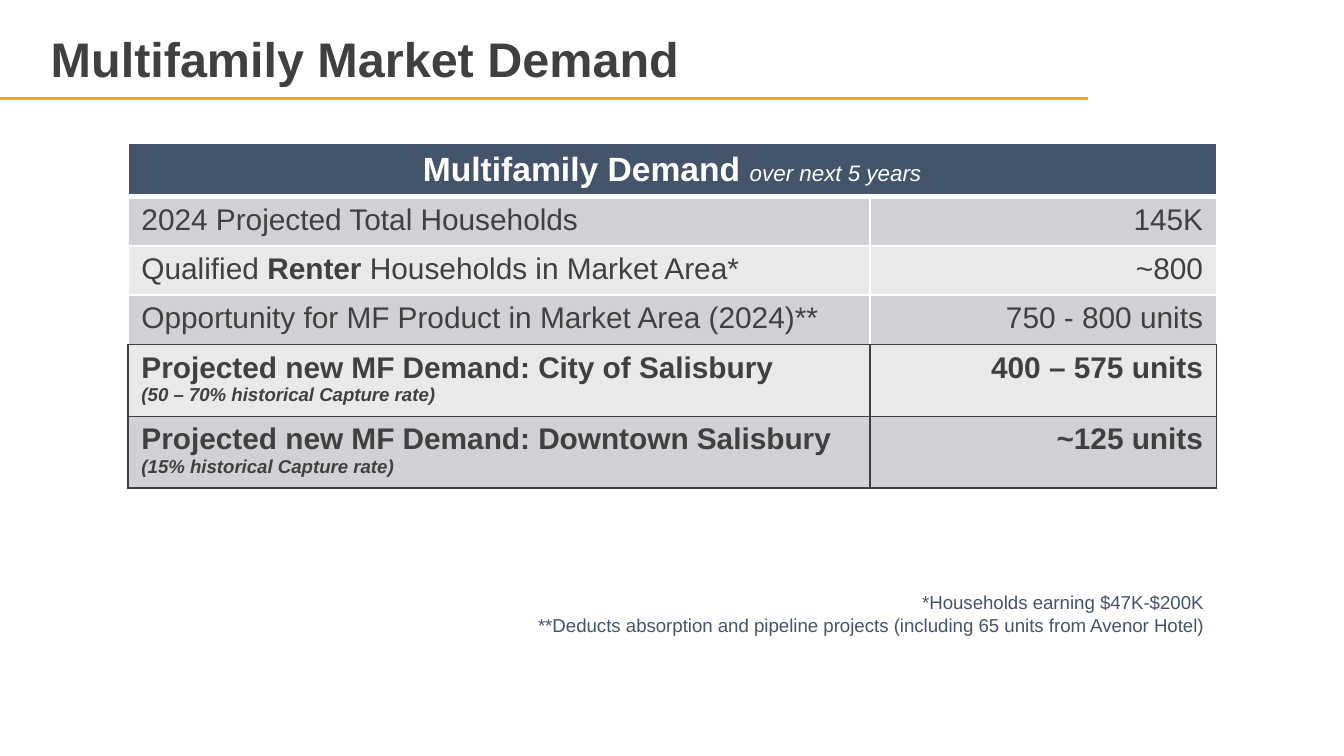
from dataclasses import dataclass
from lxml.etree import SubElement as Sub
from pptx import Presentation
from pptx.dml.color import RGBColor as RGB
from pptx.enum.shapes import MSO_CONNECTOR as Conn
from pptx.enum.text import MSO_ANCHOR as Anchor, PP_ALIGN as Align
from pptx.oxml import parse_xml
from pptx.oxml.ns import qn, nsdecls
from pptx.util import Cm, Pt


@dataclass
class Theme:
    font: str = "Arial"
    ink: str = "404040"
    navy: str = "44546A"
    gold: str = "FCA129"
    white: str = "FFFFFF"
    dark: str = "CFD1D4"
    light: str = "E9E9EB"
    title: int = 26
    head: int = 18
    sub: int = 12
    body: int = 16
    note: int = 10


class Deck:
    def __init__(self, look, wide, high):
        self.look = look
        self.file = Presentation()
        self.file.slide_width, self.file.slide_height = Cm(wide), Cm(high)
        self.slide = self.file.slides.add_slide(self.file.slide_layouts[6])

    def fill(self, frame, paras, color, align=Align.LEFT):
        for i, runs in enumerate(paras):
            para = frame.add_paragraph() if i else frame.paragraphs[0]
            para.alignment = align
            for text, size, style in runs:
                run = para.add_run()
                run.text = text
                form = {"name": self.look.font, "size": Pt(size),
                        "bold": "b" in style, "italic": "i" in style}
                for key, val in form.items():
                    setattr(run.font, key, val)
                run.font.color.rgb = RGB.from_string(color)

    def text(self, box, paras, color, **form):
        frame = self.slide.shapes.add_textbox(*map(Cm, box)).text_frame
        align = form.pop("align", Align.LEFT)
        for key, val in form.items():
            setattr(frame, key, val)
        self.fill(frame, paras, color, align)

    def line(self, ends, color, width):
        rule = self.slide.shapes.add_connector(Conn.STRAIGHT, *map(Cm, ends))
        rule.line.color.rgb = RGB.from_string(color)
        rule.line.width = Pt(width)
        Sub(rule._element.spPr, qn("a:effectLst"))

    def table(self, left, top, cols, rows):
        shape = self.slide.shapes.add_table(
            len(rows), len(cols), Cm(left), Cm(top), Cm(sum(cols)), Cm(sum(rows)))
        grid = shape.table
        for col, size in zip(grid.columns, cols):
            col.width = Cm(size)
        for row, size in zip(grid.rows, rows):
            row.height = Cm(size)
        return grid

    def cell(self, cell, color, edges):
        cell.fill.solid()
        cell.fill.fore_color.rgb = RGB.from_string(color)
        props = cell._tc.get_or_add_tcPr()
        for i, side in enumerate("LRTB"):
            shade, width = edges[side]
            props.insert(i, parse_xml(
                f'<a:ln{side} {nsdecls("a")} w="{int(Pt(width))}"><a:solidFill>'
                f'<a:srgbClr val="{shade}"/></a:solidFill></a:ln{side}>'))

    def save(self):
        self.file.save("out.pptx")


def main():
    look = Theme()
    deck = Deck(look, 25.4, 14.29)
    body, note = look.body, look.note

    deck.line((0, 1.86, 20.57, 1.86), look.gold, 2)
    deck.text((0.71, 0.38, 19.86, 1.45),
              [[("Multifamily Market Demand", look.title, "b")]], look.ink,
              word_wrap=True, vertical_anchor=Anchor.MIDDLE)

    rows = [
        ([[("2024 Projected Total Households", body, "")]], "145K", ""),
        ([[("Qualified", body, ""), (" Renter ", body, "b"),
           ("Households in Market Area*", body, "")]], "~800", ""),
        ([[("Opportunity for MF Product in Market Area (2024)**", body, "")]],
         "750 - 800 units", ""),
        ([[("Projected new MF Demand: City of Salisbury", body, "b")],
          [("(50 – 70% historical Capture rate)", note, "bi")]],
         "400 – 575 units", "b"),
        ([[("Projected new MF Demand: Downtown Salisbury", body, "b")],
          [("(15% historical Capture rate)", note, "bi")]],
         "~125 units", "b"),
    ]
    highs = [0.92] + [1.27 if style else 0.92 for *_, style in rows]
    grid = deck.table(2.42, 2.7, (14.02, 6.55), highs)

    pale, thick, black = (look.white, 1), (look.white, 3), (look.ink, 1)
    plain = dict.fromkeys("LRTB", pale)
    for cell in grid.rows[0].cells:
        deck.cell(cell, look.navy, plain | {"B": thick})
    head = grid.cell(0, 0)
    head.merge(grid.cell(0, 1))
    head.vertical_anchor = Anchor.MIDDLE
    deck.fill(head.text_frame, [[("Multifamily Demand ", look.head, "b"),
                                 ("over next 5 years", look.sub, "i")]],
              look.white, Align.CENTER)

    for i, (label, value, style) in enumerate(rows, 1):
        edges = dict.fromkeys("LRTB", black) if style else dict(plain)
        if i == 1:
            edges["T"] = thick
        if i < len(rows) and rows[i][2]:
            edges["B"] = black
        pairs = (label, Align.LEFT), ([[(value, body, style)]], Align.RIGHT)
        for cell, (paras, align) in zip(grid.rows[i].cells, pairs):
            deck.cell(cell, look.dark if i % 2 else look.light, edges)
            deck.fill(cell.text_frame, paras, look.ink, align)

    notes = ("*Households earning $47K-$200K",
             "**Deducts absorption and pipeline projects "
             "(including 65 units from Avenor Hotel)")
    deck.text((9.73, 11.05, 13.26, 1.12), [[(text, note, "")] for text in notes],
              look.navy, align=Align.RIGHT, word_wrap=True)
    deck.save()


if __name__ == "__main__":
    main()
